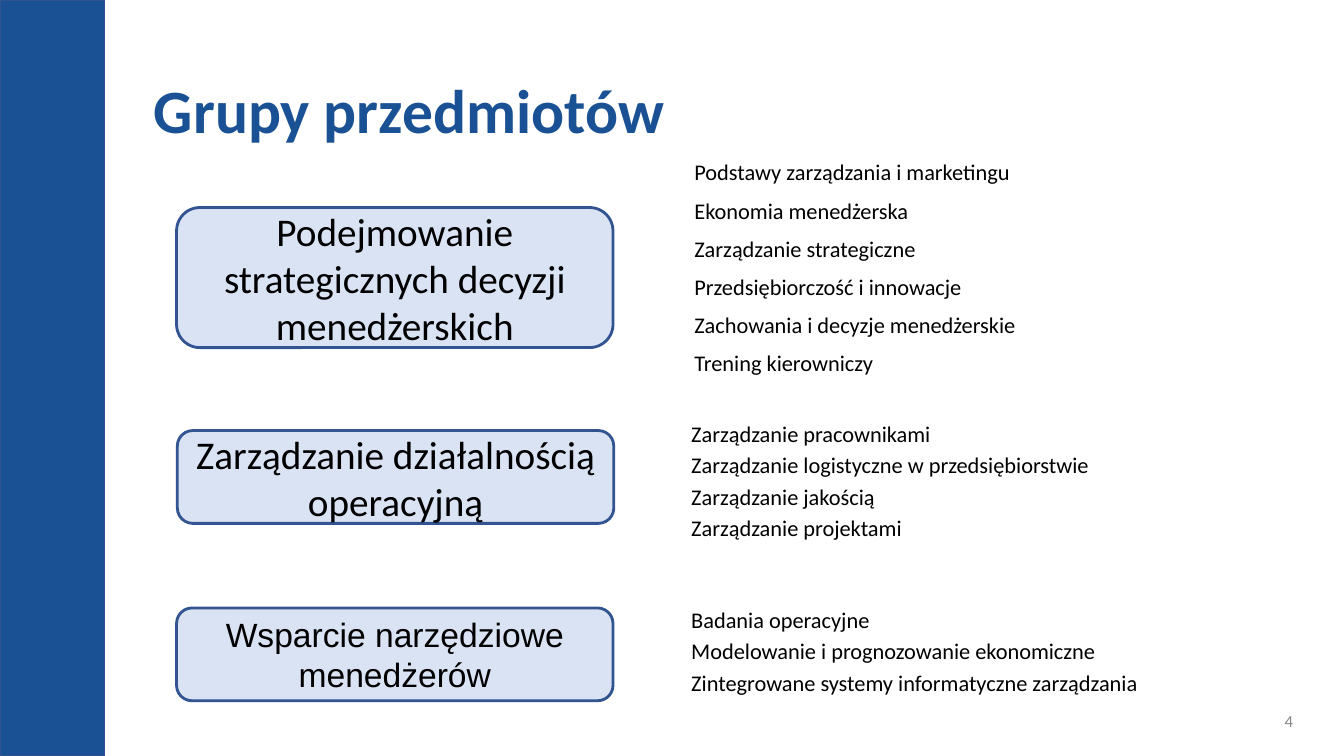
"""Builds the slide that lists three groups of management subjects."""
from dataclasses import dataclass

import lxml.etree
import pptx
import pptx.dml.color
import pptx.enum.shapes
import pptx.enum.text
import pptx.oxml.ns
import pptx.util

Cm, Pt = pptx.util.Cm, pptx.util.Pt
ALIGN = pptx.enum.text.PP_ALIGN
ANCHOR = pptx.enum.text.MSO_ANCHOR
PRESET = pptx.enum.shapes.MSO_SHAPE
NAVY, BLACK, GREY = "1A5194", "000000", "888888"


@dataclass(frozen=True)
class Box:
    left: float
    top: float
    width: float
    height: float

    def lengths(self) -> list:
        return [Cm(v) for v in (self.left, self.top, self.width, self.height)]


@dataclass(frozen=True)
class TextStyle:
    size: float
    color: str = BLACK
    font: str = "Calibri"
    bold: bool = False
    align: ALIGN = ALIGN.LEFT
    anchor: ANCHOR = ANCHOR.MIDDLE
    line: float = 1.0
    gap: float = 0
    inset: float = 0.25


@dataclass(frozen=True)
class Group:
    name: str
    name_box: Box
    name_style: TextStyle
    subjects: list[str]
    subjects_box: Box
    subjects_style: TextStyle


SUBJECT_STYLE = TextStyle(16, anchor=ANCHOR.TOP, gap=3.2, inset=0)
GROUPS = [
    Group("Podejmowanie strategicznych decyzji menedżerskich",
          Box(4.45, 5.23, 11, 3.53), TextStyle(28, align=ALIGN.CENTER),
          ["Podstawy zarządzania i marketingu", "Ekonomia menedżerska",
           "Zarządzanie strategiczne", "Przedsiębiorczość i innowacje",
           "Zachowania i decyzje menedżerskie", "Trening kierowniczy"],
          Box(17.25, 3.94, 13.84, 4.93),
          TextStyle(16, anchor=ANCHOR.TOP, line=0.9, gap=10)),
    Group("Zarządzanie działalnością operacyjną",
          Box(4.47, 10.85, 11, 2.34), TextStyle(28, align=ALIGN.CENTER),
          ["Zarządzanie pracownikami",
           "Zarządzanie logistyczne w przedsiębiorstwie",
           "Zarządzanie jakością", "Zarządzanie projektami"],
          Box(17.42, 10.46, 13.44, 3.4), SUBJECT_STYLE),
    Group("Wsparcie narzędziowe menedżerów",
          Box(4.45, 15.32, 11, 2.34),
          TextStyle(24, font="Arial", align=ALIGN.CENTER),
          ["Badania operacyjne", "Modelowanie i prognozowanie ekonomiczne",
           "Zintegrowane systemy informatyczne zarządzania"],
          Box(17.42, 15.14, 13.44, 2.97), SUBJECT_STYLE),
]


def rgb(code: str) -> pptx.dml.color.RGBColor:
    """Turn a hex string into a colour."""
    return pptx.dml.color.RGBColor.from_string(code)


def apply(target, values: dict) -> None:
    """Set every named attribute on the target."""
    for name, value in values.items():
        setattr(target, name, value)


def write(shape, lines: list[str], style: TextStyle) -> None:
    """Fill a shape with one unbulleted paragraph per line."""
    frame = shape.text_frame
    apply(frame, {
        "word_wrap": True, "auto_size": pptx.enum.text.MSO_AUTO_SIZE.NONE,
        "vertical_anchor": style.anchor,
        "margin_left": Cm(style.inset), "margin_right": Cm(style.inset),
        "margin_top": Cm(0.13), "margin_bottom": Cm(0.13)})
    for index, line in enumerate(lines):
        paragraph = frame.add_paragraph() if index else frame.paragraphs[0]
        properties = paragraph._p.get_or_add_pPr()
        properties.set("marL", "0")
        properties.set("indent", "0")
        lxml.etree.SubElement(properties, pptx.oxml.ns.qn("a:buNone"))
        apply(paragraph, {
            "alignment": style.align, "line_spacing": style.line,
            "space_before": Pt(style.gap if index else 0),
            "space_after": Pt(0)})
        run = paragraph.add_run()
        run.text = line
        apply(run.font, {"size": Pt(style.size), "name": style.font,
                         "bold": style.bold})
        run.font.color.rgb = rgb(style.color)


def place(placeholder, box: Box) -> None:
    """Move a placeholder to its box."""
    apply(placeholder, dict(zip(("left", "top", "width", "height"),
                                box.lengths())))


def add_panel(slide, preset: PRESET, box: Box, fill: str, line: str,
              weight: float):
    """Draw a filled and outlined preset shape."""
    panel = slide.shapes.add_shape(preset, *box.lengths())
    panel.shadow.inherit = False
    panel.fill.solid()
    panel.fill.fore_color.rgb = rgb(fill)
    panel.line.color.rgb = rgb(line)
    panel.line.width = Pt(weight)
    return panel


def main() -> None:
    """Build and save the slide."""
    deck = pptx.Presentation()
    apply(deck, {"slide_width": Cm(33.87), "slide_height": Cm(19.05)})
    slide = deck.slides.add_slide(deck.slide_layouts.get_by_name("Comparison"))
    title, *bodies = slide.placeholders

    add_panel(slide, PRESET.RECTANGLE, Box(0, 0, 2.64, 19.05),
              NAVY, "31538F", 1)
    place(title, Box(3.63, 1.02, 29.21, 3.68))
    write(title, ["Grupy przedmiotów"],
          TextStyle(44, NAVY, bold=True, line=0.9))

    for group, body in zip(GROUPS, bodies):
        panel = add_panel(slide, PRESET.ROUNDED_RECTANGLE, group.name_box,
                          "DAE3F3", "325491", 2)
        write(panel, [group.name], group.name_style)
        place(body, group.subjects_box)
        write(body, group.subjects, group.subjects_style)
    for unused in bodies[len(GROUPS):]:
        unused.element.getparent().remove(unused.element)

    page_number = slide.shapes.add_textbox(
        *Box(25.22, 17.65, 7.62, 1.02).lengths())
    write(page_number, ["4"], TextStyle(12, GREY, align=ALIGN.RIGHT))
    deck.save("out.pptx")


if __name__ == "__main__":
    main()
